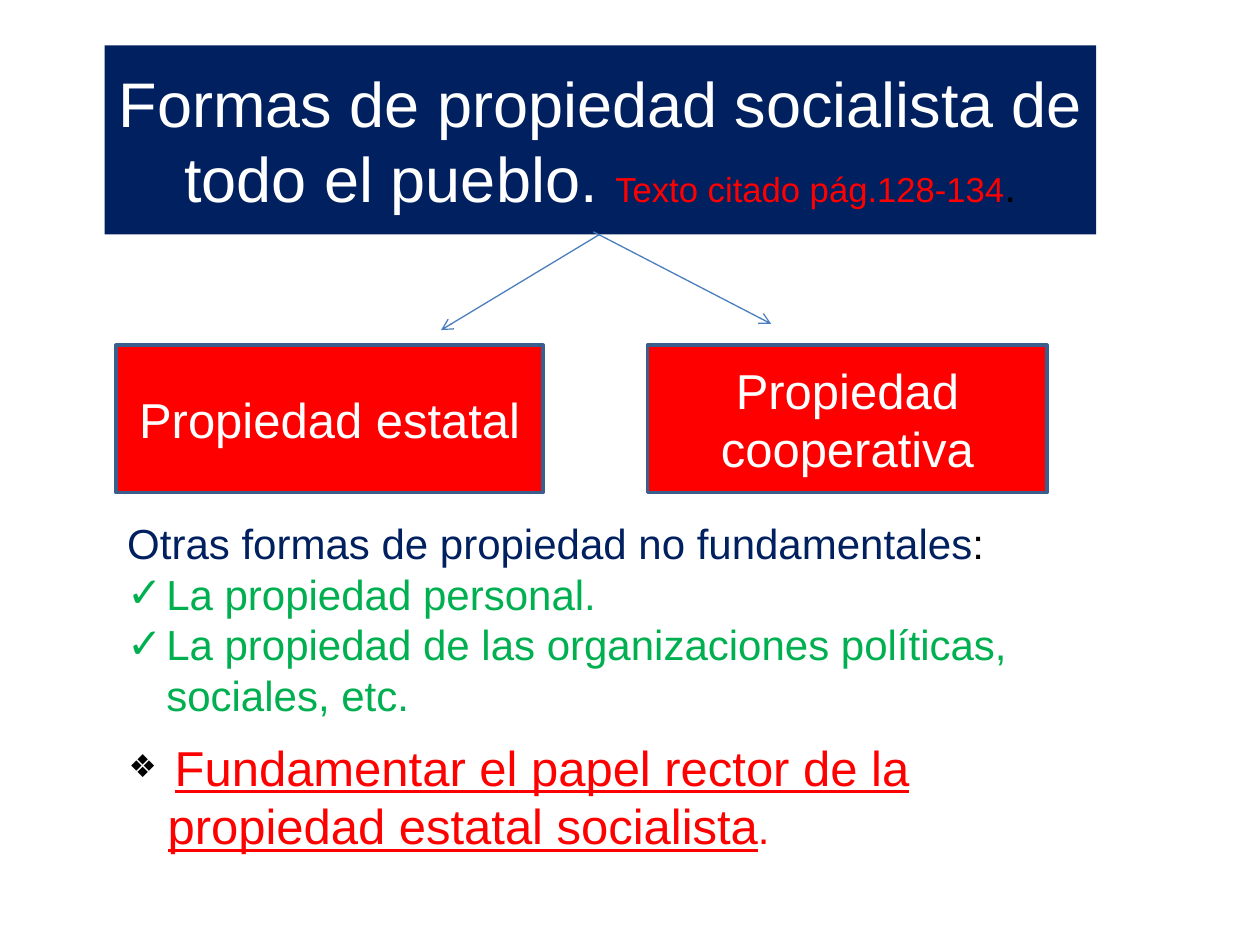
from lxml import etree
from pptx import Presentation
from pptx.dml.color import RGBColor
from pptx.enum.shapes import MSO_CONNECTOR, MSO_SHAPE
from pptx.enum.text import MSO_ANCHOR, MSO_AUTO_SIZE, PP_ALIGN
from pptx.oxml.ns import qn
from pptx.util import Inches, Pt

NAVY = RGBColor(0x00, 0x20, 0x60)
RED = RGBColor(0xFF, 0x00, 0x00)
GREEN = RGBColor(0x00, 0xB0, 0x50)
WHITE = RGBColor(0xFF, 0xFF, 0xFF)
BLACK = RGBColor(0x00, 0x00, 0x00)
BORDER = RGBColor(0x3A, 0x5F, 0x8C)
ARROW = RGBColor(0x4B, 0x7E, 0xBC)

CENTER, LEFT = PP_ALIGN.CENTER, PP_ALIGN.LEFT
MIDDLE, TOP = MSO_ANCHOR.MIDDLE, MSO_ANCHOR.TOP
NO_AUTOFIT = MSO_AUTO_SIZE.NONE
RECTANGLE = MSO_SHAPE.RECTANGLE
STRAIGHT = MSO_CONNECTOR.STRAIGHT

HANGING = Inches(0.31)
BOX_TOP, BOX_HEIGHT = 2.74, 1.17


def place(shape, left, top, width, height):
    shape.left, shape.top = Inches(left), Inches(top)
    shape.width, shape.height = Inches(width), Inches(height)


def prepare_frame(shape, anchor):
    frame = shape.text_frame
    frame.word_wrap = True
    frame.auto_size = NO_AUTOFIT
    frame.vertical_anchor = anchor
    return frame


def add_run(paragraph, text, size, color, font="Arial", underline=None):
    run = paragraph.add_run()
    run.text = text
    run.font.name = font
    run.font.size = Pt(size)
    run.font.color.rgb = color
    run.font.underline = underline


def set_bullet(paragraph, bullet):
    paragraph.space_before = Pt(0)
    properties = paragraph._p.get_or_add_pPr()
    indent = HANGING if bullet else 0
    properties.set("marL", str(indent))
    properties.set("indent", str(-indent))
    if bullet:
        etree.SubElement(properties, qn("a:buChar")).set("char", bullet)
    else:
        etree.SubElement(properties, qn("a:buNone"))


def fill_title(title):
    place(title, 0.83, 0.36, 7.87, 1.5)
    title.fill.solid()
    title.fill.fore_color.rgb = NAVY
    heading = prepare_frame(title, MIDDLE).paragraphs[0]
    heading.alignment = CENTER
    add_run(heading, "Formas de propiedad socialista de todo el pueblo. ", 36, WHITE)
    add_run(heading, "Texto citado pág.128-134", 19.8, RED)
    add_run(heading, ".", 24.3, BLACK)


def fill_list(body, area, items):
    place(body, *area)
    frame = prepare_frame(body, TOP)
    for index, (bullet, runs) in enumerate(items):
        paragraph = frame.add_paragraph() if index else frame.paragraphs[0]
        paragraph.alignment = LEFT
        set_bullet(paragraph, bullet)
        for run in runs:
            add_run(paragraph, *run)


def add_property_box(slide, label, left, width):
    box = slide.shapes.add_shape(
        RECTANGLE, Inches(left), Inches(BOX_TOP), Inches(width), Inches(BOX_HEIGHT))
    box.shadow.inherit = False
    box.fill.solid()
    box.fill.fore_color.rgb = RED
    box.line.color.rgb = BORDER
    box.line.width = Pt(2)
    paragraph = prepare_frame(box, MIDDLE).paragraphs[0]
    paragraph.alignment = CENTER
    add_run(paragraph, label, 28, WHITE)


def add_arrow(slide, start, end):
    arrow = slide.shapes.add_connector(STRAIGHT, *map(Inches, start + end))
    arrow.line.color.rgb = ARROW
    arrow.line.width = Pt(0.75)
    etree.SubElement(arrow.line._get_or_add_ln(), qn("a:tailEnd")).set("type", "arrow")
    etree.SubElement(arrow._element.spPr, qn("a:effectLst"))


def main():
    deck = Presentation()
    deck.slide_width, deck.slide_height = Inches(10), Inches(7.5)
    slide = deck.slides.add_slide(deck.slide_layouts.get_by_name("Two Content"))
    title, other_forms, task = slide.placeholders

    fill_title(title)
    add_property_box(slide, "Propiedad estatal", 0.92, 3.39)
    add_property_box(slide, "Propiedad cooperativa", 5.14, 3.17)
    add_arrow(slide, (4.76, 1.86), (3.5, 2.62))
    add_arrow(slide, (4.71, 1.84), (6.12, 2.57))

    fill_list(other_forms, (0.91, 4.06, 8.03, 1.72), [
        (None, [("Otras formas de propiedad no fundamentales", 24, NAVY),
                (":", 24, BLACK)]),
        ("✓", [("La propiedad personal.", 24, GREEN)]),
        ("✓", [("La propiedad de las organizaciones políticas, sociales, etc.",
                24, GREEN)]),
    ])
    fill_list(task, (0.92, 5.8, 7.39, 1.04), [
        ("❖", [(" ", 18, BLACK, "Calibri"),
               ("Fundamentar el papel rector de la propiedad estatal socialista",
                28, RED, "Arial", True),
               (".", 24, RED)]),
    ])
    deck.save("out.pptx")


if __name__ == "__main__":
    main()
